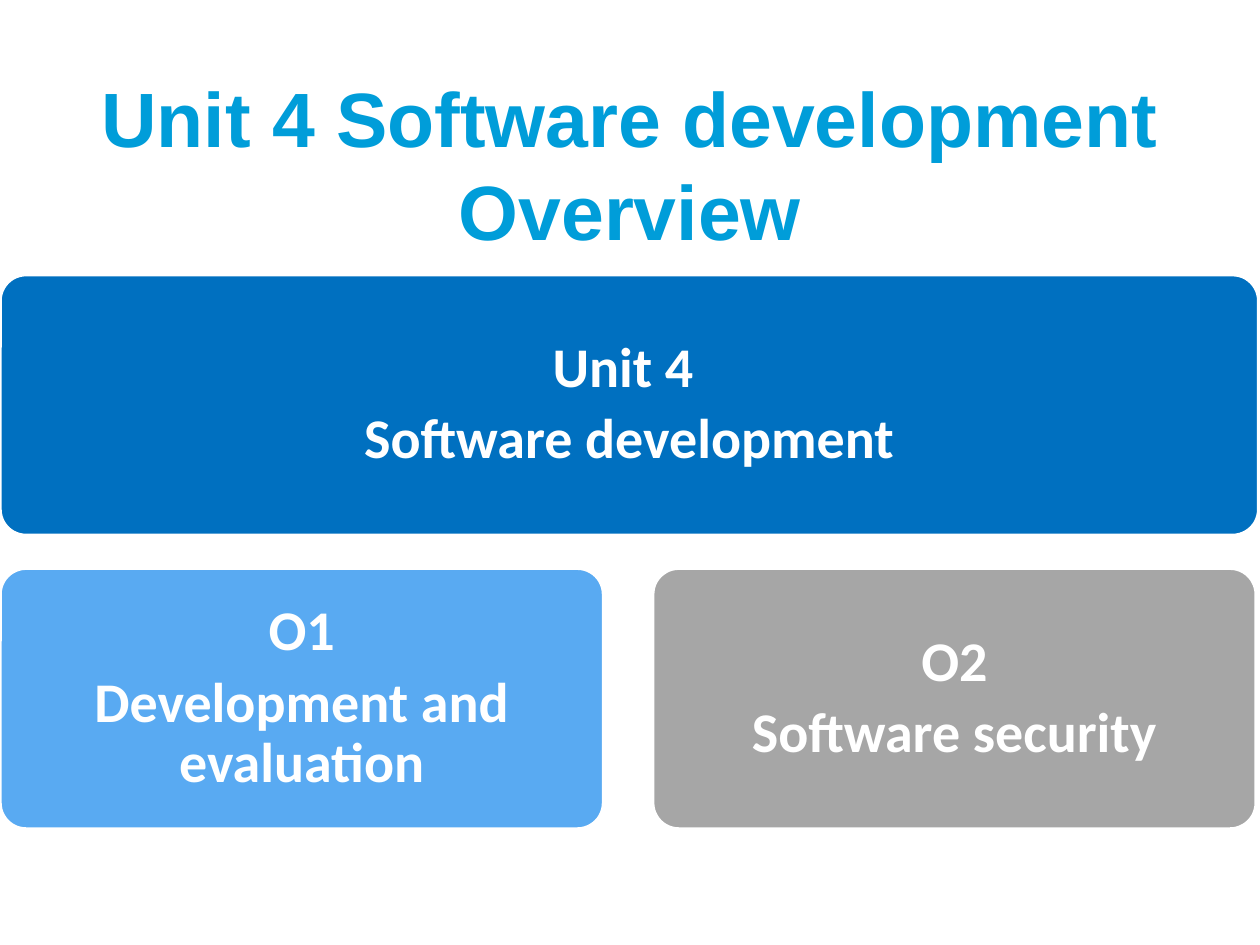
from pptx import Presentation
from pptx.dml.color import RGBColor
from pptx.enum.shapes import MSO_SHAPE
from pptx.enum.text import MSO_ANCHOR, PP_ALIGN
from pptx.util import Inches, Pt

COLORS = {
    "title": "009DD9",
    "unit": "0070C0",
    "development": "59AAF2",
    "security": "A6A6A6",
    "white": "FFFFFF",
}


def color(name):
    return RGBColor.from_string(COLORS[name])


def write_text(frame, paragraphs, *, size, font, ink, inset, spacing=1.0, after=0):
    frame.word_wrap = True
    frame.vertical_anchor = MSO_ANCHOR.MIDDLE
    frame.margin_left = frame.margin_right = Inches(inset[0])
    frame.margin_top = frame.margin_bottom = Inches(inset[1])
    for index, text in enumerate(paragraphs):
        para = frame.add_paragraph() if index else frame.paragraphs[0]
        para.text = text
        para.alignment = PP_ALIGN.CENTER
        para.line_spacing = spacing
        para.space_after = Pt(after)
        for span in para.runs:
            span.font.size = Pt(size)
            span.font.name = font
            span.font.bold = True
            span.font.color.rgb = color(ink)


class OverviewSlide:
    title_style = dict(size=44, font="Arial", ink="title", inset=(0.1, 0.05))
    card_style = dict(size=32, font="Calibri", ink="white", inset=(0.13, 0.13),
                      spacing=0.9, after=6)
    card_height = 2.07

    def __init__(self, page):
        self.page = page

    def title(self, text, left, top, width, height):
        box = self.page.shapes.add_textbox(
            Inches(left), Inches(top), Inches(width), Inches(height))
        write_text(box.text_frame, [text], **self.title_style)

    def card(self, paragraphs, fill, left, top, width):
        box = self.page.shapes.add_shape(
            MSO_SHAPE.ROUNDED_RECTANGLE,
            Inches(left), Inches(top), Inches(width), Inches(self.card_height))
        box.adjustments[0] = 0.1
        box.shadow.inherit = False
        box.fill.solid()
        box.fill.fore_color.rgb = color(fill)
        box.line.color.rgb = color("white")
        box.line.width = Pt(2)
        write_text(box.text_frame, paragraphs, **self.card_style)


def main():
    deck = Presentation()
    deck.slide_width, deck.slide_height = Inches(10), Inches(7.5)
    overview = OverviewSlide(deck.slides.add_slide(deck.slide_layouts[6]))

    overview.title("Unit 4 Software development\vOverview", 0, 0.67, 10, 1.25)
    overview.card(["Unit 4 ", "Software development"], "unit", 0, 2.18, 9.99)

    outcomes = [
        (["O1", "Development and evaluation"], "development"),
        (["O2", "Software security"], "security"),
    ]
    width, gap = 4.79, 0.39
    for column, (paragraphs, fill) in enumerate(outcomes):
        overview.card(paragraphs, fill, column * (width + gap), 4.51, width)

    deck.save("out.pptx")


if __name__ == "__main__":
    main()
